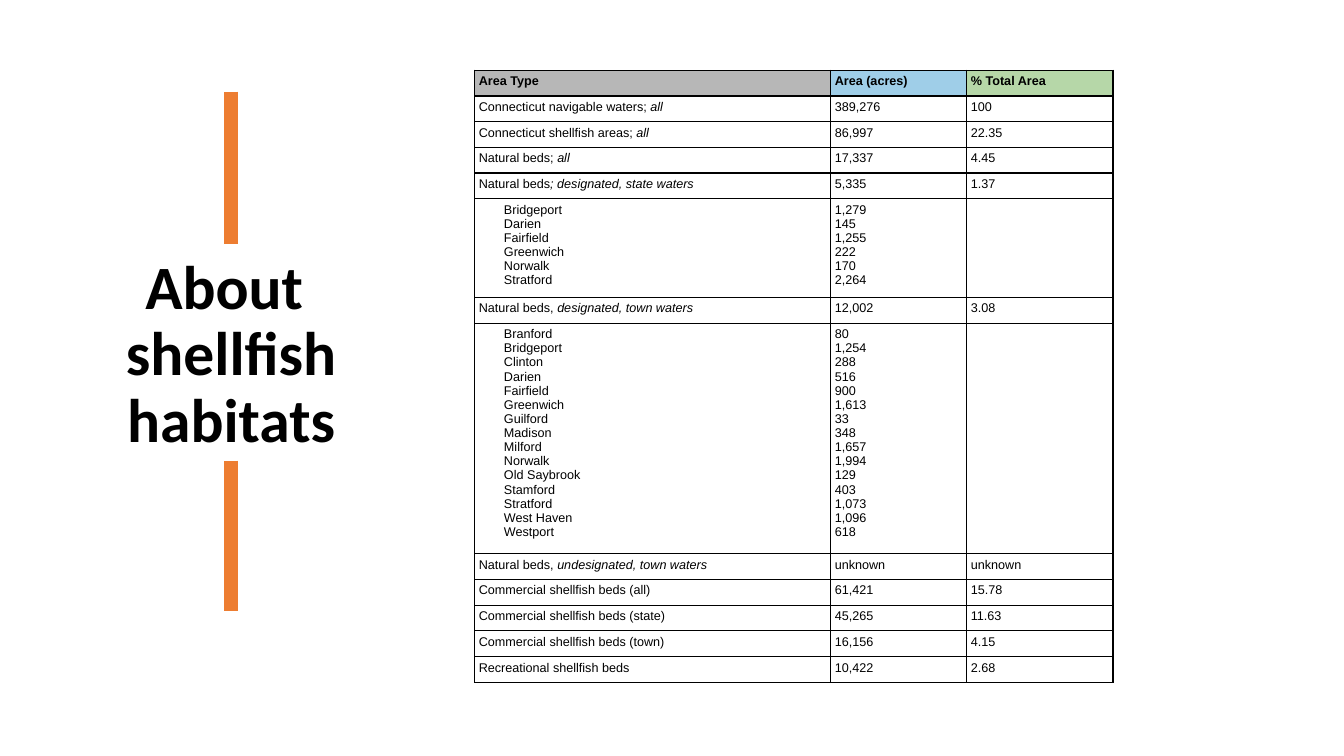
from dataclasses import dataclass

from lxml.etree import SubElement
from pptx import Presentation
from pptx.dml.color import RGBColor
from pptx.enum.shapes import MSO_CONNECTOR as Connector
from pptx.enum.text import MSO_ANCHOR as Anchor, MSO_AUTO_SIZE as AutoSize, PP_ALIGN as Align
from pptx.oxml.ns import qn
from pptx.util import Pt

BLACK = RGBColor(0x00, 0x00, 0x00)
ORANGE = RGBColor(0xED, 0x7D, 0x31)
GREY = RGBColor(0xB7, 0xB7, 0xB7)
BLUE = RGBColor(0x9F, 0xCE, 0xE8)
GREEN = RGBColor(0xB6, 0xD7, 0xA8)

HEADERS = [("Area Type", GREY), ("Area (acres)", BLUE), ("% Total Area", GREEN)]
COLUMN_WIDTHS = [254.3, 97.2, 104.4]
ROW_HEIGHT = 18.36
CELL_MARGIN = 2.9
TOWN_INDENT = 18
BAR_X = 164.9


@dataclass
class HabitatRow:
    label: str
    note: str
    area: str
    share: str


@dataclass
class TownRow:
    height: float
    acres: dict[str, str]


@dataclass
class Bar:
    top: float
    bottom: float


STATE_TOWNS = {
    "Bridgeport": "1,279", "Darien": "145", "Fairfield": "1,255",
    "Greenwich": "222", "Norwalk": "170", "Stratford": "2,264",
}
TOWN_TOWNS = {
    "Branford": "80", "Bridgeport": "1,254", "Clinton": "288", "Darien": "516",
    "Fairfield": "900", "Greenwich": "1,613", "Guilford": "33", "Madison": "348",
    "Milford": "1,657", "Norwalk": "1,994", "Old Saybrook": "129", "Stamford": "403",
    "Stratford": "1,073", "West Haven": "1,096", "Westport": "618",
}
ROWS = [
    HabitatRow("Connecticut navigable waters; ", "all", "389,276", "100"),
    HabitatRow("Connecticut shellfish areas; ", "all", "86,997", "22.35"),
    HabitatRow("Natural beds; ", "all", "17,337", "4.45"),
    HabitatRow("Natural beds", "; designated, state waters", "5,335", "1.37"),
    TownRow(70.6, STATE_TOWNS),
    HabitatRow("Natural beds, ", "designated, town waters", "12,002", "3.08"),
    TownRow(164.8, TOWN_TOWNS),
    HabitatRow("Natural beds, ", "undesignated, town waters", "unknown", "unknown"),
    HabitatRow("Commercial shellfish beds (all)", "", "61,421", "15.78"),
    HabitatRow("Commercial shellfish beds (state)", "", "45,265", "11.63"),
    HabitatRow("Commercial shellfish beds (town)", "", "16,156", "4.15"),
    HabitatRow("Recreational shellfish beds", "", "10,422", "2.68"),
]
BARS = [Bar(65.5, 174.2), Bar(329, 436.3)]


def format_runs(paragraph, font_name: str, size: float, bold: bool) -> None:
    for run in paragraph.runs:
        run.font.name = font_name
        run.font.size = Pt(size)
        run.font.bold = bold
        run.font.color.rgb = BLACK


def add_borders(cell) -> None:
    properties = cell._tc.get_or_add_tcPr()
    for side in ("a:lnL", "a:lnR", "a:lnT", "a:lnB"):
        line = SubElement(properties, qn(side), w=str(Pt(1)))
        fill = SubElement(line, qn("a:solidFill"))
        SubElement(fill, qn("a:srgbClr"), val=str(BLACK))


def fill_cell(cell, text: str, note: str = "", bold: bool = False,
              color: RGBColor | None = None, indent: float = 0) -> None:
    cell.margin_left = cell.margin_right = Pt(CELL_MARGIN)
    cell.margin_top = cell.margin_bottom = Pt(CELL_MARGIN)
    add_borders(cell)
    if color is None:
        cell.fill.background()
    else:
        cell.fill.solid()
        cell.fill.fore_color.rgb = color
    cell.text_frame.text = text
    if note:
        run = cell.text_frame.paragraphs[0].add_run()
        run.text = note
        run.font.italic = True
    for paragraph in cell.text_frame.paragraphs:
        format_runs(paragraph, "Arial", 9, bold)
        if indent:
            paragraph._p.get_or_add_pPr().set("marL", str(Pt(indent)))


def add_title(slide) -> None:
    title = slide.shapes.title
    title.left, title.top, title.width, title.height = Pt(24.5), Pt(81.4), Pt(281.5), Pt(247.7)
    frame = title.text_frame
    frame.text = "About \vshellfish habitats"
    frame.word_wrap = True
    frame.auto_size = AutoSize.NONE
    frame.vertical_anchor = Anchor.BOTTOM
    paragraph = frame.paragraphs[0]
    paragraph.alignment = Align.CENTER
    paragraph.line_spacing = 0.9
    format_runs(paragraph, "Calibri", 44, True)


def add_habitat_table(slide) -> None:
    heights = [ROW_HEIGHT] + [row.height if isinstance(row, TownRow) else ROW_HEIGHT for row in ROWS]
    table = slide.shapes.add_table(
        len(heights), len(COLUMN_WIDTHS), Pt(339.1), Pt(50.2),
        Pt(sum(COLUMN_WIDTHS)), Pt(sum(heights))).table
    table.first_row = table.horz_banding = False
    for column, width in zip(table.columns, COLUMN_WIDTHS):
        column.width = Pt(width)
    for table_row, height in zip(table.rows, heights):
        table_row.height = Pt(height)
    for index, (header, color) in enumerate(HEADERS):
        fill_cell(table.cell(0, index), header, bold=True, color=color)
    for index, row in enumerate(ROWS, start=1):
        label, area, share = (table.cell(index, column) for column in range(3))
        if isinstance(row, TownRow):
            fill_cell(label, "\n".join(row.acres), indent=TOWN_INDENT)
            fill_cell(area, "\n".join(row.acres.values()))
            fill_cell(share, "")
        else:
            fill_cell(label, row.label, row.note)
            fill_cell(area, row.area)
            fill_cell(share, row.share)


def add_bar(slide, bar: Bar) -> None:
    connector = slide.shapes.add_connector(
        Connector.STRAIGHT, Pt(BAR_X), Pt(bar.top), Pt(BAR_X), Pt(bar.bottom))
    connector.line.color.rgb = ORANGE
    connector.line.width = Pt(10)
    SubElement(connector._element.spPr, qn("a:effectLst"))


def main() -> None:
    presentation = Presentation()
    presentation.slide_width, presentation.slide_height = Pt(960), Pt(540)
    slide = presentation.slides.add_slide(presentation.slide_layouts[5])
    add_title(slide)
    add_habitat_table(slide)
    for bar in BARS:
        add_bar(slide, bar)
    presentation.save("out.pptx")


if __name__ == "__main__":
    main()
